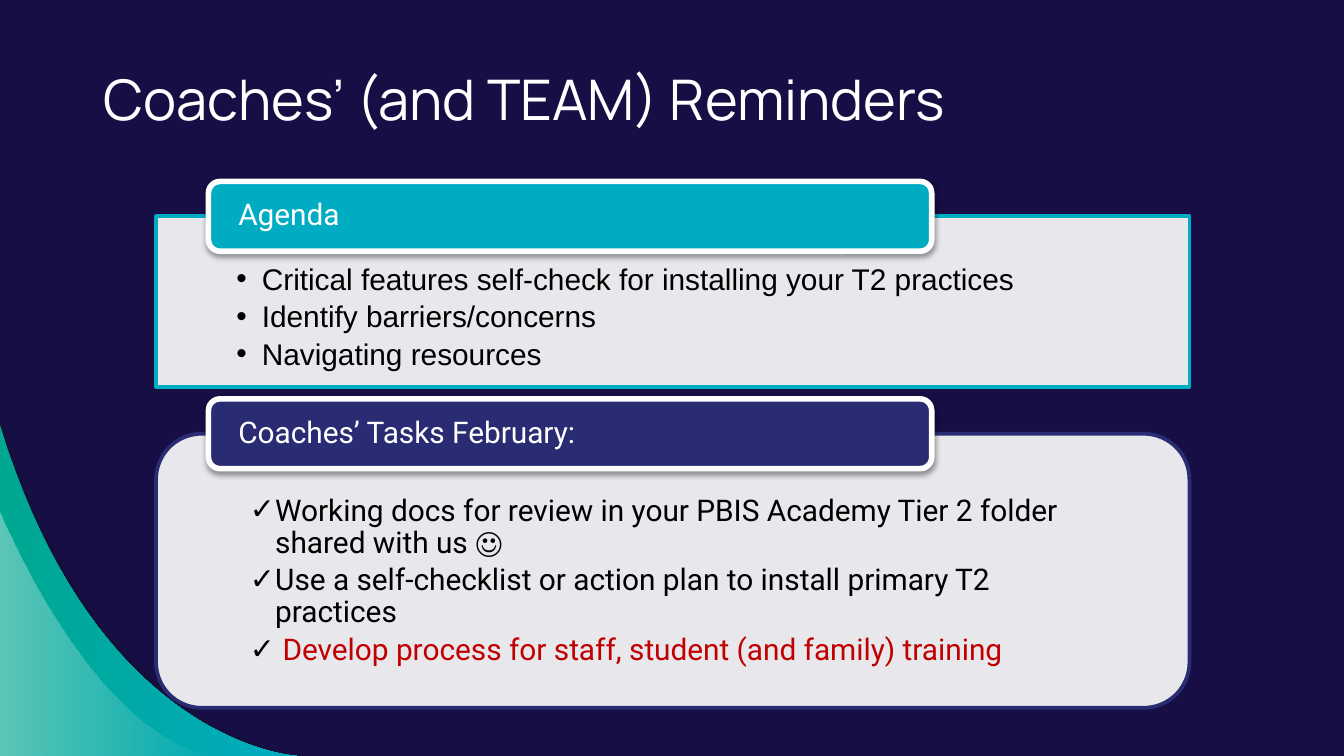
"""Builds the coaches' reminders slide with two captioned panels."""
from lxml.etree import SubElement
from pptx import Presentation
from pptx.dml.color import RGBColor
from pptx.enum.shapes import MSO_SHAPE
from pptx.enum.text import MSO_ANCHOR, PP_ALIGN
from pptx.oxml.ns import qn
from pptx.util import Cm, Pt

COLORS = {
    "night": "160E44", "shade": "12102F", "teal": "00ACC2", "green": "00A791",
    "indigo": "292C73", "white": "FFFFFF", "black": "000000", "red": "C00000",
}


def paint(color, name, opacity=100):
    color.rgb = RGBColor.from_string(COLORS[name])
    if opacity < 100:
        for clr in color._xFill.iter(qn("a:srgbClr")) if hasattr(color, "_xFill") else ():
            SubElement(clr, qn("a:alpha"), val=str(opacity * 1000))


def write(sp, lines, font="Roboto", size=16, color="white", insets=(0.25, 0.25, 0.25, 0.25),
          anchor=MSO_ANCHOR.TOP, spacing=1.0, after=0, bullet=None):
    tf = sp.text_frame
    tf.word_wrap = True
    tf.vertical_anchor = anchor
    tf.margin_left, tf.margin_top, tf.margin_right, tf.margin_bottom = map(Cm, insets)
    for i, text in enumerate(lines):
        p = tf.add_paragraph() if i else tf.paragraphs[0]
        p.alignment = PP_ALIGN.LEFT
        p.line_spacing = spacing
        p.space_after = Pt(after)
        if bullet:
            pPr = p._p.get_or_add_pPr()
            pPr.set("marL", str(Cm(0.48)))
            pPr.set("indent", str(Cm(-0.48)))
            SubElement(SubElement(pPr, qn("a:buClr")), qn("a:srgbClr"), val=COLORS["black"])
            SubElement(pPr, qn("a:buFont"), typeface="Arial")
            SubElement(pPr, qn("a:buChar"), char=bullet)
        r = p.add_run()
        r.text = text
        r.font.name = font
        r.font.size = Pt(size)
        paint(r.font.color, color)


prs = Presentation()
prs.slide_width, prs.slide_height = Cm(25.4), Cm(14.29)
s = prs.slides.add_slide(prs.slide_layouts[6])
s.background.fill.solid()
paint(s.background.fill.fore_color, "night")

STEPS = 40
waves = [
    ([(0, 7.87), (1.85, 14.07), (5.77, 14.29), (5.77, 14.29)], [("shade", 54)]),
    ([(0, 8.03), (1.83, 14.1), (5.61, 14.29), (5.61, 14.29)], [("green", 100), ("teal", 100)]),
    ([(0, 9.65), (0, 9.65), (1.75, 14), (4.11, 14.29)], [("white", 36), ("white", 0)]),
]
for controls, stops in waves:
    curve = []
    for step in range(STEPS + 1):
        t = step / STEPS
        weights = ((1 - t) ** 3, 3 * t * (1 - t) ** 2, 3 * t ** 2 * (1 - t), t ** 3)
        curve.append([Cm(sum(w * pt[axis] for w, pt in zip(weights, controls))) for axis in (0, 1)])
    builder = s.shapes.build_freeform(*curve[0])
    builder.add_line_segments(curve[1:] + [(0, Cm(14.29))], close=True)
    sp = builder.convert_to_shape()
    sp.shadow.inherit = False
    sp.line.fill.background()
    if len(stops) == 1:
        sp.fill.solid()
        targets = [sp.fill.fore_color]
    else:
        sp.fill.gradient()
        sp.fill.gradient_angle = 0
        targets = [stop.color for stop in sp.fill.gradient_stops]
    for target, (name, opacity) in zip(targets, stops):
        paint(target, name, opacity)

sp = s.shapes.add_textbox(Cm(1.7), Cm(0.97), Cm(19.53), Cm(1.75))
write(sp, ["Coaches’ (and TEAM) Reminders"], font="Manrope", size=30)

panels = [
    ("Agenda", "teal", MSO_SHAPE.RECTANGLE, 4.09, 3.23, "Arial", "•",
     ["Critical features self-check for installing your T2 practices",
      "Identify barriers/concerns",
      "Navigating resources"]),
    ("Coaches’ Tasks February:", "indigo", MSO_SHAPE.ROUNDED_RECTANGLE, 8.2, 5.18, "Roboto", "✓",
     ["Working docs for review in your PBIS Academy Tier 2 folder shared with us ☺",
      "Use a self-checklist or action plan to install primary T2 practices",
      " Develop process for staff, student (and family) training"]),
]
for heading, accent, kind, top, height, font, bullet, items in panels:
    body = s.shapes.add_shape(kind, Cm(2.95), Cm(top), Cm(19.53), Cm(height))
    header = s.shapes.add_shape(MSO_SHAPE.ROUNDED_RECTANGLE,
                                Cm(3.94), Cm(top - 0.66), Cm(13.67), Cm(1.32))
    for sp, fill, opacity, line, width in ((body, "white", 90, accent, 2),
                                           (header, accent, 100, "white", 3)):
        sp.shadow.inherit = False
        sp.fill.solid()
        paint(sp.fill.fore_color, fill, opacity)
        paint(sp.line.color, line)
        sp.line.width = Pt(width)
    effects = header._element.spPr.find(qn("a:effectLst"))
    shadow = SubElement(effects, qn("a:outerShdw"), blurRad=str(Pt(3.1)), dist=str(Pt(1.6)),
                        dir="5400000", rotWithShape="0")
    clr = SubElement(shadow, qn("a:srgbClr"), val=COLORS["black"])
    SubElement(clr, qn("a:alpha"), val="38000")
    write(body, items, font=font, color="black", insets=(1.52, 0.91, 1.52, 0.3),
          spacing=0.9, after=2.8, bullet=bullet)
    write(header, [heading], insets=(0.5, 0, 0.5, 0), anchor=MSO_ANCHOR.MIDDLE, spacing=0.9)

paint(body.text_frame.paragraphs[-1].runs[0].font.color, "red")

prs.save("out.pptx")
